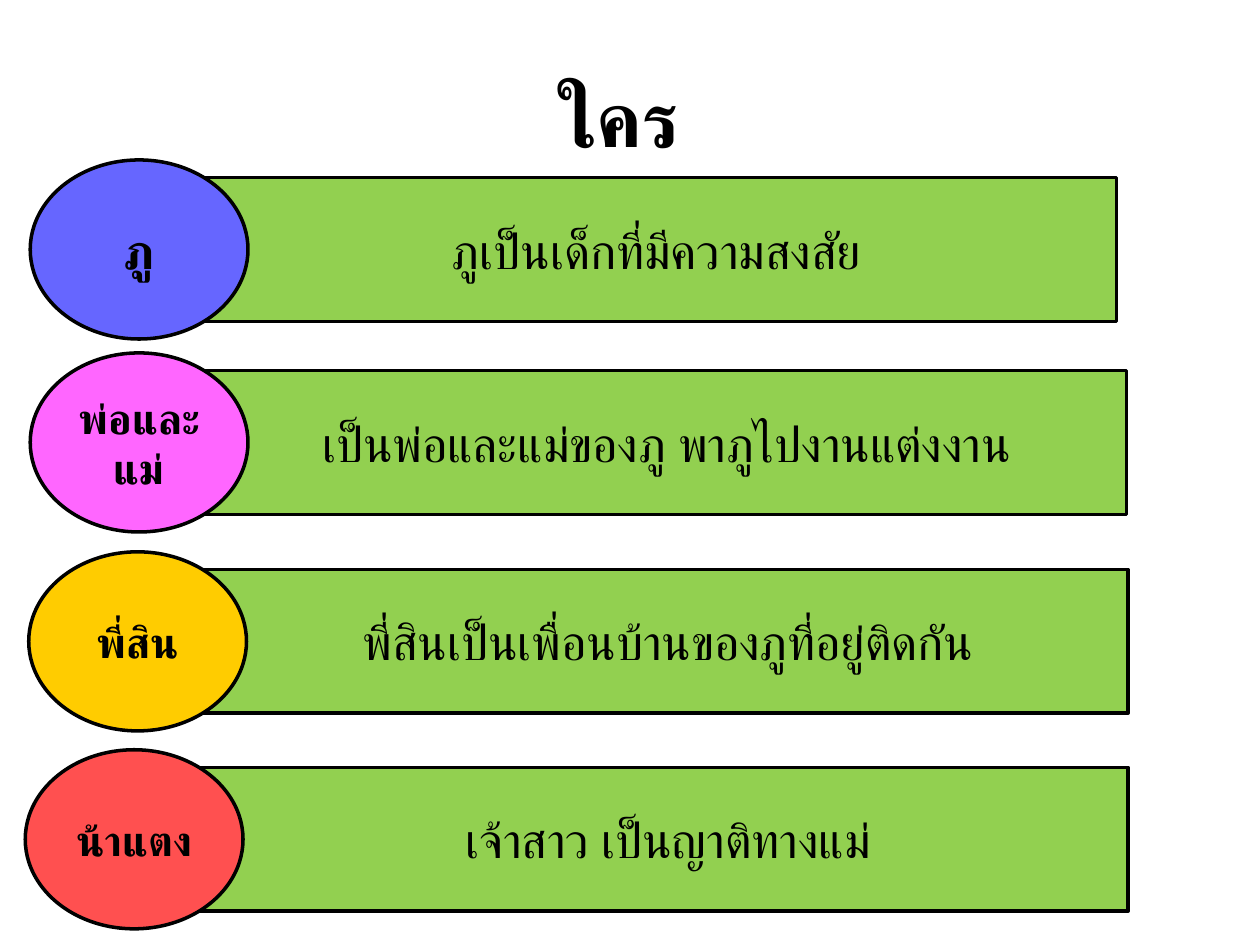
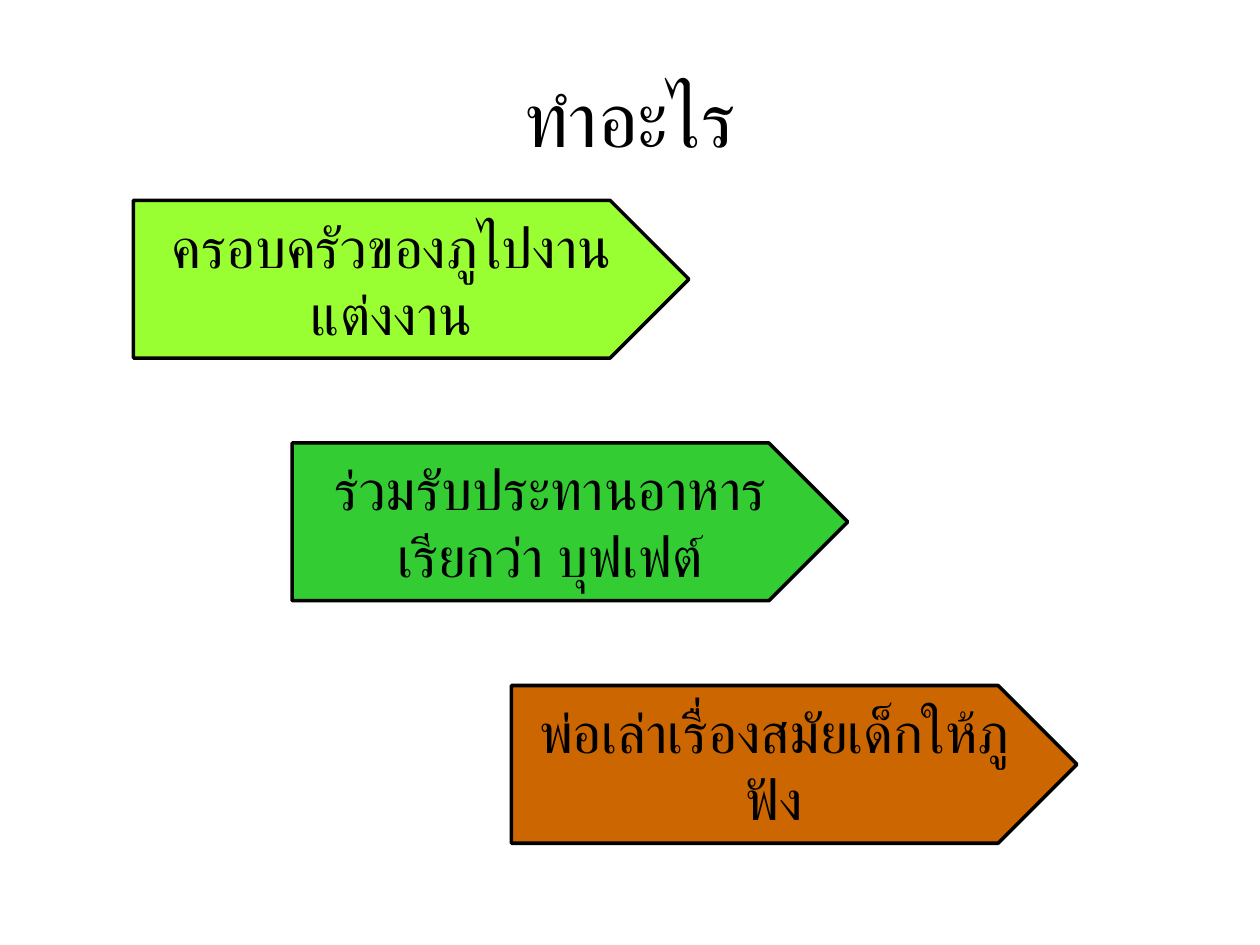
from pptx import Presentation
from pptx.dml.color import RGBColor
from pptx.enum.shapes import MSO_SHAPE
from pptx.enum.text import MSO_ANCHOR, PP_ALIGN
from pptx.util import Cm, Pt

RECTANGLE = MSO_SHAPE.RECTANGLE
OVAL = MSO_SHAPE.OVAL
PENTAGON = MSO_SHAPE.PENTAGON
MIDDLE = MSO_ANCHOR.MIDDLE
CENTER = PP_ALIGN.CENTER

FONT = "Calibri"
BLACK = RGBColor(0x00, 0x00, 0x00)
BAR_GREEN = RGBColor(0x92, 0xD0, 0x50)
BLUE = RGBColor(0x66, 0x66, 0xFF)
PINK = RGBColor(0xFF, 0x66, 0xFF)
YELLOW = RGBColor(0xFF, 0xCC, 0x00)
RED = RGBColor(0xFF, 0x50, 0x50)
LIME = RGBColor(0x99, 0xFF, 0x33)
GREEN = RGBColor(0x33, 0xCC, 0x33)
BROWN = RGBColor(0xCC, 0x66, 0x00)

TITLE_ONLY = 5

# Sizes in centimetres
BAR_WIDTH, BAR_HEIGHT = 18.8, 2.9
OVAL_WIDTH, OVAL_HEIGHT = 4.39, 3.61
ARROW_TOP, ARROW_STEP, ARROW_HEIGHT = 4.04, 4.89, 3.18

# Name, name size, oval colour, oval left, bar left, bar top, description
CHARACTERS = [
    ("ภู", 28, BLUE, 0.61, 3.71, 3.58, " ภูเป็นเด็กที่มีความสงสัย"),
    ("พ่อและแม่", 24, PINK, 0.61, 3.91, 7.47,
     " เป็นพ่อและแม่ของภู พาภูไปงานแต่งงาน"),
    ("พี่สิน", 24, YELLOW, 0.58, 3.94, 11.48,
     " พี่สินเป็นเพื่อนบ้านของภูที่อยู่ติดกัน"),
    ("น้าแตง", 24, RED, 0.51, 3.94, 15.47, " เจ้าสาว เป็นญาติทางแม่"),
]

# Text, colour, left, width
EVENTS = [
    ("ครอบครัวของภูไปงานแต่งงาน", LIME, 2.69, 11.2),
    ("ร่วมรับประทานอาหาร\nเรียกว่า บุฟเฟต์", GREEN, 5.89, 11.2),
    ("พ่อเล่าเรื่องสมัยเด็กให้ภูฟัง", BROWN, 10.31, 11.4),
]


def set_text(shape, text, size, bold=False):
    """Write centred black text in a shape or placeholder."""
    text_frame = shape.text_frame
    text_frame.text = text
    text_frame.word_wrap = True
    text_frame.vertical_anchor = MIDDLE
    for paragraph in text_frame.paragraphs:
        paragraph.alignment = CENTER
        for run in paragraph.runs:
            run.font.name = FONT
            run.font.size = Pt(size)
            run.font.bold = bold
            run.font.color.rgb = BLACK


def add_titled_slide(presentation, title, bold=False):
    slide = presentation.slides.add_slide(presentation.slide_layouts[TITLE_ONLY])
    placeholder = slide.shapes.title
    placeholder.left, placeholder.top = Cm(1.27), Cm(0.76)
    placeholder.width, placeholder.height = Cm(22.86), Cm(3.18)
    set_text(placeholder, title, 44, bold)
    return slide


def add_box(slide, kind, left, top, width, height, fill, text, size, bold=False):
    """Add a filled shape with a black outline."""
    shape = slide.shapes.add_shape(kind, Cm(left), Cm(top), Cm(width), Cm(height))
    shape.shadow.inherit = False
    shape.fill.solid()
    shape.fill.fore_color.rgb = fill
    shape.line.color.rgb = BLACK
    shape.line.width = Pt(2)
    set_text(shape, text, size, bold)


def add_character(slide, name, name_size, colour, oval_left, bar_left, bar_top,
                  description):
    """Add a description bar with a name oval centred on its left end."""
    add_box(slide, RECTANGLE, bar_left, bar_top, BAR_WIDTH, BAR_HEIGHT,
            BAR_GREEN, description, 28)
    oval_top = bar_top - (OVAL_HEIGHT - BAR_HEIGHT) / 2
    add_box(slide, OVAL, oval_left, oval_top, OVAL_WIDTH, OVAL_HEIGHT,
            colour, name, name_size, bold=True)


def main():
    presentation = Presentation()
    presentation.slide_width, presentation.slide_height = Cm(25.4), Cm(19.05)

    # Who
    who_slide = add_titled_slide(presentation, "ใคร ", bold=True)
    for character in CHARACTERS:
        add_character(who_slide, *character)

    # What they do
    what_slide = add_titled_slide(presentation, "ทำอะไร")
    for index, (text, colour, left, width) in enumerate(EVENTS):
        add_box(what_slide, PENTAGON, left, ARROW_TOP + index * ARROW_STEP,
                width, ARROW_HEIGHT, colour, text, 32)

    presentation.save("out.pptx")


if __name__ == "__main__":
    main()
